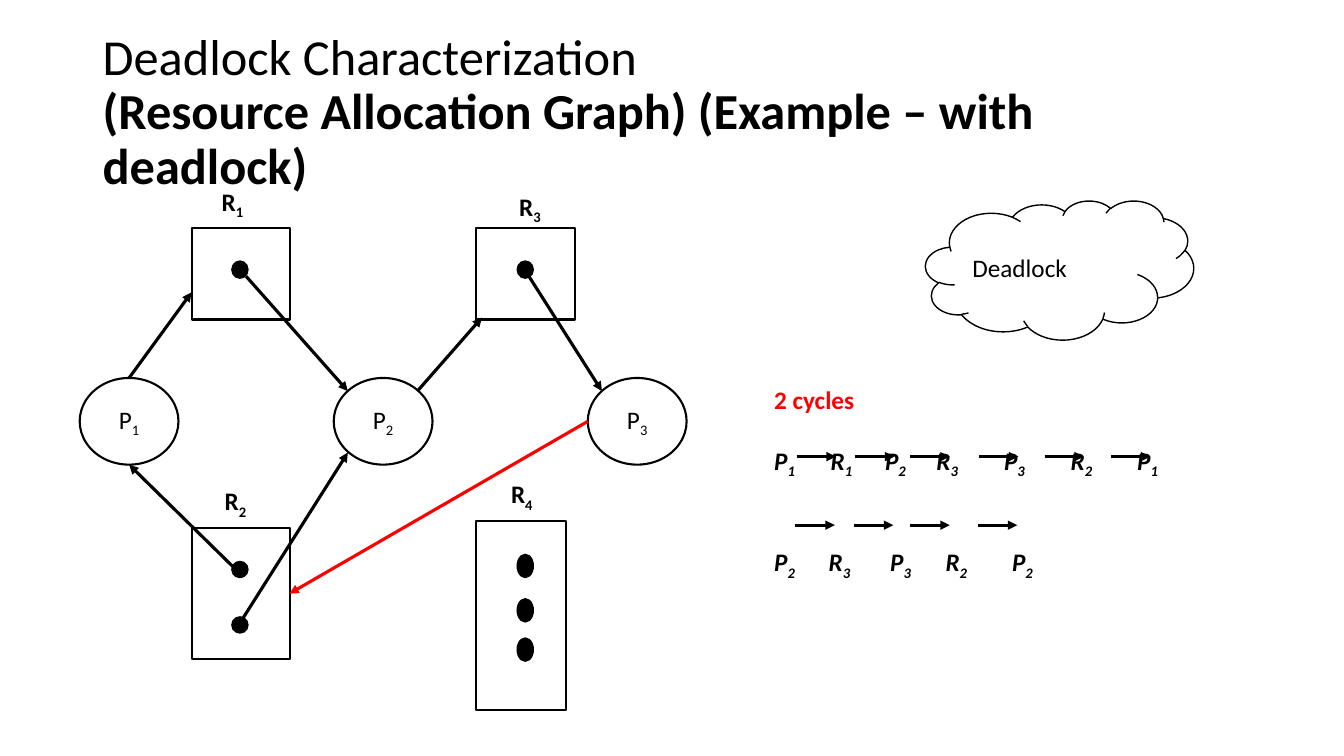
from dataclasses import dataclass

from lxml import etree
from pptx import Presentation
from pptx.dml.color import RGBColor
from pptx.enum.shapes import MSO_CONNECTOR, MSO_SHAPE
from pptx.enum.text import MSO_ANCHOR, PP_ALIGN
from pptx.oxml.ns import qn
from pptx.util import Inches, Pt

OVAL, RECT, CLOUD = MSO_SHAPE.OVAL, MSO_SHAPE.RECTANGLE, MSO_SHAPE.CLOUD
STRAIGHT = MSO_CONNECTOR.STRAIGHT
CENTER, MIDDLE = PP_ALIGN.CENTER, MSO_ANCHOR.MIDDLE
BLACK, WHITE, RED = "000000", "FFFFFF", "FF0000"
FONT = "Calibri"
NODE_WIDTH = 0.98
DOT_WIDTH = 0.16
PROCESS_TOP, PROCESS_HEIGHT = 3.75, 0.86
STEP_LENGTH = 0.39
CYCLES_LEFT, CYCLES_INSET = 7.58, 0.1


@dataclass
class Process:
    name: str
    left: float


@dataclass
class Resource:
    name: str
    box: tuple[float, float, float, float]
    label_at: tuple[float, float]
    dot_left: float
    dot_tops: tuple[float, ...]
    dot_height: float


@dataclass
class Edge:
    start: tuple[float, float]
    end: tuple[float, float]
    color: str = BLACK


@dataclass
class Cycle:
    nodes: tuple[str, ...]
    node_lefts: tuple[float, ...]
    step_lefts: tuple[float, ...]
    step_top: float
    space_before: int


PROCESSES = [Process(f"P{i + 1}", 0.79 + 2.52 * i) for i in range(3)]
RESOURCES = [
    Resource("R1", (1.9, 2.26, NODE_WIDTH, 0.91), (2.1, 1.8), 2.3, (2.59,), 0.17),
    Resource("R2", (1.9, 5.24, NODE_WIDTH, 1.3), (2.13, 4.77), 2.3, (5.57, 6.12), 0.16),
    Resource("R3", (4.72, 2.26, NODE_WIDTH, 0.91), (5.05, 1.85), 5.13, (2.59,), 0.17),
    Resource("R4", (4.72, 5.17, 0.89, 1.87), (4.97, 4.7), 5.13, (5.5, 5.94, 6.33), 0.23),
]
EDGES = [
    Edge((1.28, 3.75), (1.9, 2.9)),
    Edge((2.44, 2.74), (3.45, 3.88)),
    Edge((4.14, 3.88), (4.78, 3.15)),
    Edge((5.22, 2.7), (5.97, 3.88)),
    Edge((2.37, 5.68), (1.28, 4.61)),
    Edge((2.38, 6.18), (3.45, 4.49)),
    Edge((5.83, 4.18), (2.87, 5.89), RED),
]
CYCLES = [
    Cycle(("P1", "R1", "P2", "R3", "P3", "R2", "P1"),
          (7.68, 8.24, 8.78, 9.29, 9.96, 10.62, 11.28),
          (7.9, 8.48, 9.03, 9.71, 10.36, 11.02), 4.53, 22),
    Cycle(("P2", "R3", "P3", "R2", "P2"),
          (7.68, 8.22, 8.83, 9.38, 10.04),
          (7.89, 8.47, 9.03, 9.7), 5.21, 48),
]


def rgb(color: str) -> RGBColor:
    return RGBColor.from_string(color)


def format_run(run, size=18, color=BLACK, bold=False, italic=False) -> None:
    font = run.font
    font.name, font.size = FONT, Pt(size)
    font.bold, font.italic = bold, italic
    font.color.rgb = rgb(color)


def add_node_name(paragraph, name: str, lead="", bold=False, italic=False) -> None:
    """Write a name such as R1 with its number as a subscript."""
    for text, baseline in ((lead + name[0], 0), (name[1:], -25000)):
        run = paragraph.add_run()
        run.text = text
        format_run(run, bold=bold, italic=italic)
        if baseline:
            run.font.subscript = True if hasattr(run.font, "subscript") else None
            run._r.get_or_add_rPr().set("baseline", str(baseline))


def add_outline(slide, preset, box, fill=WHITE, width=1.5):
    shape = slide.shapes.add_shape(preset, *map(Inches, box))
    shape.shadow.inherit = False
    shape.fill.solid()
    shape.fill.fore_color.rgb = rgb(fill)
    shape.line.color.rgb = rgb(BLACK)
    shape.line.width = Pt(width)
    shape.text_frame.vertical_anchor = MIDDLE
    shape.text_frame.paragraphs[0].alignment = CENTER
    return shape


def add_text_frame(slide, box):
    frame = slide.shapes.add_textbox(*map(Inches, box)).text_frame
    frame.word_wrap = True
    return frame


def add_arrow(slide, edge: Edge) -> None:
    arrow = slide.shapes.add_connector(STRAIGHT, *map(Inches, edge.start + edge.end))
    arrow.line.color.rgb = rgb(edge.color)
    arrow.line.width = Pt(2.25)
    etree.SubElement(arrow.line._get_or_add_ln(), qn("a:tailEnd"), type="triangle")
    etree.SubElement(arrow._element.spPr, qn("a:effectLst"))


def add_process(slide, process: Process) -> None:
    box = (process.left, PROCESS_TOP, NODE_WIDTH, PROCESS_HEIGHT)
    circle = add_outline(slide, OVAL, box)
    add_node_name(circle.text_frame.paragraphs[0], process.name)


def add_resource(slide, resource: Resource) -> None:
    add_outline(slide, RECT, resource.box)
    for top in resource.dot_tops:
        dot_box = (resource.dot_left, top, DOT_WIDTH, resource.dot_height)
        add_outline(slide, OVAL, dot_box, BLACK, 1)
    label = add_text_frame(slide, (*resource.label_at, 0.48, 0.4))
    add_node_name(label.paragraphs[0], resource.name, bold=True)


def add_cycles(slide) -> None:
    frame = add_text_frame(slide, (CYCLES_LEFT, 3.76, 5.56, 1.72))
    frame.text = "2 cycles"
    format_run(frame.paragraphs[0].runs[0], color=RED, bold=True)
    for cycle in CYCLES:
        paragraph = frame.add_paragraph()
        paragraph.space_before = Pt(cycle.space_before)
        tabs = etree.SubElement(paragraph._p.get_or_add_pPr(), qn("a:tabLst"))
        for left in cycle.node_lefts[1:]:
            offset = Inches(left - CYCLES_LEFT - CYCLES_INSET)
            etree.SubElement(tabs, qn("a:tab"), pos=str(offset), algn="l")
        for index, node in enumerate(cycle.nodes):
            add_node_name(paragraph, node, "\t" if index else "", True, True)
        for left in cycle.step_lefts:
            end = (left + STEP_LENGTH, cycle.step_top)
            add_arrow(slide, Edge((left, cycle.step_top), end))


def add_title(slide) -> None:
    frame = add_text_frame(slide, (0.92, 0.4, 11.5, 1.45))
    frame.vertical_anchor = MIDDLE
    frame.text = ("Deadlock Characterization\v"
                  "(Resource Allocation Graph) (Example – with deadlock)")
    heading = frame.paragraphs[0]
    heading.line_spacing = 0.9
    for run, bold in zip(heading.runs, (False, True)):
        format_run(run, size=36, bold=bold)


def main() -> None:
    deck = Presentation()
    deck.slide_width, deck.slide_height = Inches(13.33), Inches(7.5)
    slide = deck.slides.add_slide(deck.slide_layouts[6])
    for process in PROCESSES:
        add_process(slide, process)
    for resource in RESOURCES:
        add_resource(slide, resource)
    for edge in EDGES:
        add_arrow(slide, edge)
    verdict = add_outline(slide, CLOUD, (9.18, 1.99, 2.66, 1.38), width=1)
    verdict.text_frame.text = "Deadlock"
    format_run(verdict.text_frame.paragraphs[0].runs[0])
    add_cycles(slide)
    add_title(slide)
    deck.save("out.pptx")


if __name__ == "__main__":
    main()
